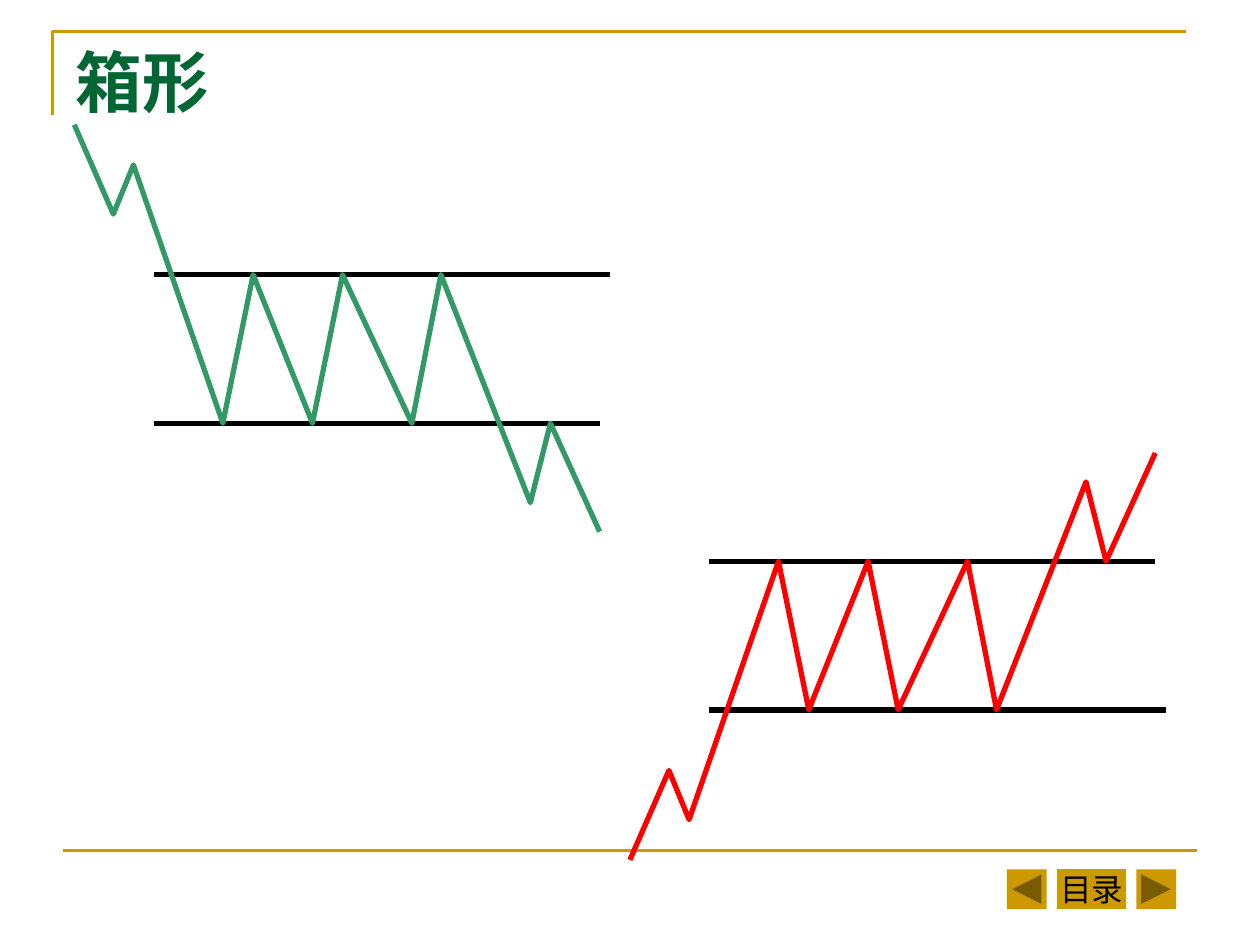
from dataclasses import dataclass

from lxml import etree
from pptx import Presentation
from pptx.dml.color import RGBColor
from pptx.enum.shapes import MSO_CONNECTOR, MSO_SHAPE
from pptx.enum.text import MSO_ANCHOR, PP_ALIGN
from pptx.oxml.ns import qn
from pptx.util import Pt

STRAIGHT = MSO_CONNECTOR.STRAIGHT
BACK = MSO_SHAPE.ACTION_BUTTON_BACK_OR_PREVIOUS
BLANK = MSO_SHAPE.ACTION_BUTTON_CUSTOM
FORWARD = MSO_SHAPE.ACTION_BUTTON_FORWARD_OR_NEXT
MIDDLE = MSO_ANCHOR.MIDDLE
LEFT, CENTER = PP_ALIGN.LEFT, PP_ALIGN.CENTER
TITLE_ONLY = 5

TOP, BOTTOM = 157, 241.9
FALL = [(42.5, 71.3), (64.8, 122.4), (76.3, 94.3), (127.4, BOTTOM),
        (144.7, TOP), (178.6, BOTTOM), (195.8, TOP), (235.4, BOTTOM),
        (252, TOP), (303.1, 287.3), (314.6, BOTTOM), (342.7, 303.8)]
LEVELS = [((87.8, BOTTOM), (342.7, BOTTOM)), ((87.8, TOP), (348.5, TOP))]
SHIFT, MIRROR = 317.5, 562.7


@dataclass(frozen=True)
class Theme:
    gold: RGBColor = RGBColor(0xCC, 0x99, 0x00)
    title: RGBColor = RGBColor(0x00, 0x66, 0x33)
    black: RGBColor = RGBColor(0x00, 0x00, 0x00)
    fall: RGBColor = RGBColor(0x33, 0x99, 0x66)
    rise: RGBColor = RGBColor(0xFF, 0x00, 0x00)
    title_font: str = "Times New Roman"
    label_font: str = "Arial"
    title_size: float = 38
    label_size: float = 18
    rule: float = 1.5
    trend: float = 3


class SlideBuilder:
    """Draws themed elements on the current slide, in points."""

    def __init__(self, s, theme):
        self.s = s
        self.theme = theme

    def add_text(self, tf, text, font, size, color, align, bold=False):
        tf.vertical_anchor = MIDDLE
        p = tf.paragraphs[0]
        p.alignment = align
        r = p.add_run()
        r.text = text
        r.font.name = font
        r.font.size = Pt(size)
        r.font.bold = bold
        r.font.color.rgb = color

    def title(self, text, x, y, w, h):
        t = self.theme
        sp = self.s.shapes.title
        sp.left, sp.top, sp.width, sp.height = Pt(x), Pt(y), Pt(w), Pt(h)
        self.add_text(sp.text_frame, text, t.title_font, t.title_size, t.title, LEFT, True)

    def line(self, shapes, start, end, color, width):
        sp = shapes.add_connector(STRAIGHT, *(Pt(v) for v in (*start, *end)))
        sp.line.color.rgb = color
        sp.line.width = Pt(width)
        etree.SubElement(sp._element.spPr, qn("a:effectLst"))

    def polyline(self, shapes, points, color, width):
        first, *rest = [(Pt(x), Pt(y)) for x, y in points]
        builder = shapes.build_freeform(*first)
        builder.add_line_segments(rest, close=False)
        sp = builder.convert_to_shape()
        sp.shadow.inherit = False
        sp.fill.background()
        sp.line.color.rgb = color
        sp.line.width = Pt(width)

    def button(self, kind, x, w, text=None):
        t = self.theme
        sp = self.s.shapes.add_shape(kind, Pt(x), Pt(496.8), Pt(w), Pt(22.7))
        sp.shadow.inherit = False
        sp.fill.solid()
        sp.fill.fore_color.rgb = t.gold
        sp.line.fill.background()
        if text:
            sp.text_frame.word_wrap = False
            self.add_text(sp.text_frame, text, t.label_font, t.label_size, t.black, CENTER)

    def box_pattern(self, levels, trend, color):
        t = self.theme
        shapes = self.s.shapes.add_group_shape().shapes
        for start, end in levels:
            self.line(shapes, start, end, t.black, t.trend)
        self.polyline(shapes, trend, color, t.trend)


def flip(points):
    return [(x + SHIFT, MIRROR - y) for x, y in points]


def main():
    prs = Presentation()
    prs.slide_width, prs.slide_height = Pt(720), Pt(540)
    theme = Theme()
    s = prs.slides.add_slide(prs.slide_layouts[TITLE_ONLY])
    b = SlideBuilder(s, theme)
    b.polyline(s.shapes, [(30, 66), (30, 18), (678, 18)], theme.gold, theme.rule)
    b.line(s.shapes, (36, 486), (684, 486), theme.gold, theme.rule)
    b.button(BLANK, 604, 39.6, "目录")
    b.button(BACK, 575.4, 22.7)
    b.button(FORWARD, 649.3, 22.7)
    b.title("箱形", 36, 21.6, 648, 49.7)
    b.box_pattern(LEVELS, FALL, theme.fall)
    b.box_pattern([flip(level) for level in LEVELS], flip(FALL), theme.rise)
    prs.save("out.pptx")


if __name__ == "__main__":
    main()
